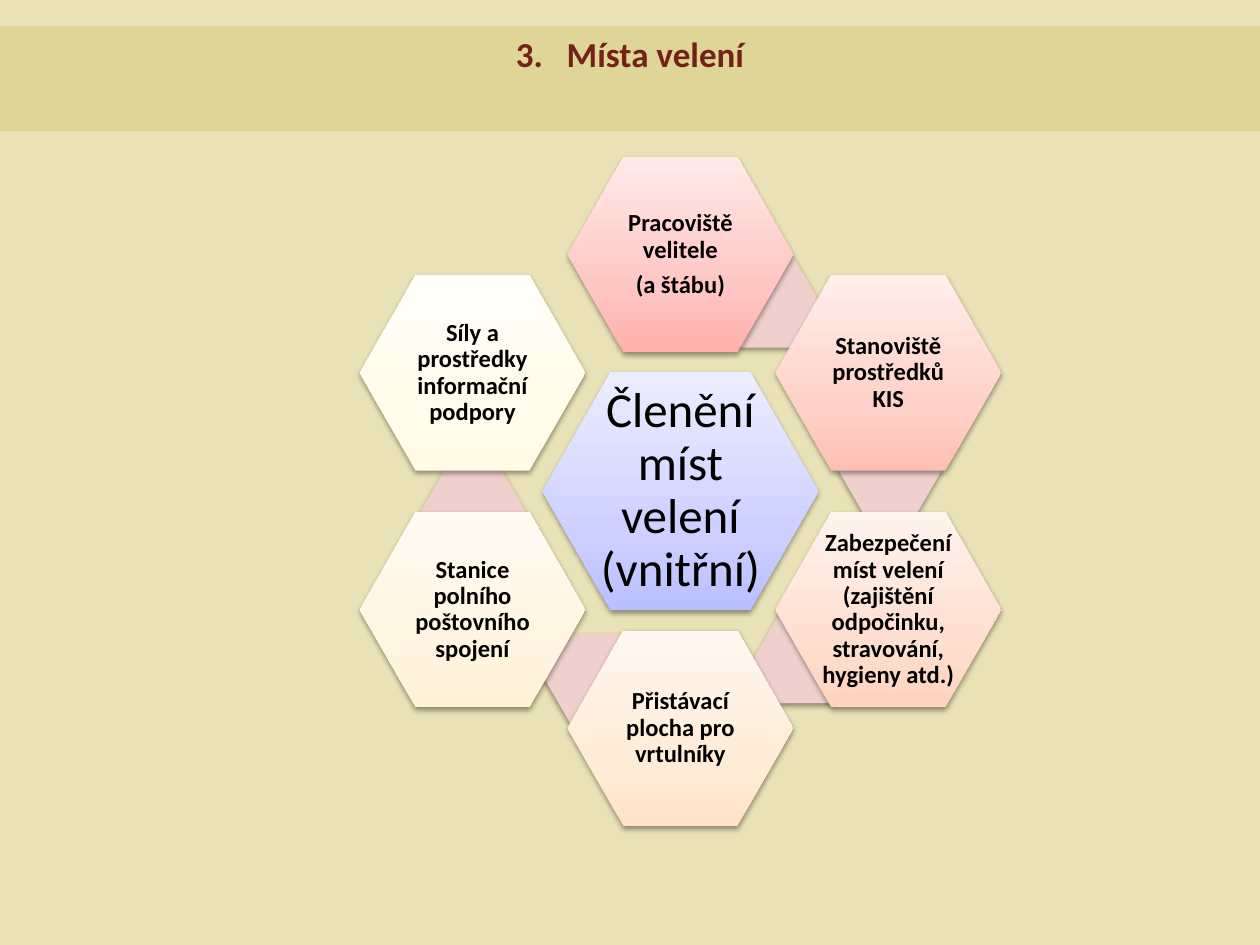
from copy import deepcopy

from lxml.etree import SubElement
from pptx import Presentation
from pptx.dml.color import RGBColor
from pptx.enum.shapes import MSO_SHAPE
from pptx.enum.text import MSO_ANCHOR, MSO_AUTO_SIZE, PP_ALIGN
from pptx.oxml.ns import qn
from pptx.util import Inches, Pt

BACKGROUND = RGBColor(0xE9, 0xE2, 0xB6)
BAND = RGBColor(0xDF, 0xD5, 0x96)
TITLE = RGBColor(0x72, 0x22, 0x19)
LINK = RGBColor(0xEF, 0xD0, 0xCF)
BLACK = RGBColor(0, 0, 0)
BLUES = [RGBColor(0xBA, 0xBF, 0xFF), RGBColor(0xCE, 0xD1, 0xFF), RGBColor(0xEC, 0xED, 0xFF)]
PINKS = [RGBColor(0xFF, 0xB0, 0xAC), RGBColor(0xFF, 0xC7, 0xC4), RGBColor(0xFF, 0xEA, 0xE9)]
CORALS = [RGBColor(0xFF, 0xC0, 0xB3), RGBColor(0xFF, 0xD2, 0xC9), RGBColor(0xFF, 0xEE, 0xEA)]
PEACHES = [RGBColor(0xFF, 0xD3, 0xBD), RGBColor(0xFF, 0xDF, 0xD0), RGBColor(0xFF, 0xF3, 0xED)]
APRICOTS = [RGBColor(0xFF, 0xE4, 0xC8), RGBColor(0xFF, 0xEC, 0xD8), RGBColor(0xFF, 0xF7, 0xF0)]
CREAMS = [RGBColor(0xFF, 0xF2, 0xD6), RGBColor(0xFF, 0xF5, 0xE1), RGBColor(0xFF, 0xFB, 0xF3)]
IVORIES = [RGBColor(0xFF, 0xFB, 0xE6), RGBColor(0xFF, 0xFC, 0xEC), RGBColor(0xFF, 0xFE, 0xF8)]

FONT = "Calibri"
CENTER_X, CENTER_Y = 5.4, 3.9
COLUMN_STEP, ROW_STEP = 1.65, 0.94
CENTER_SIZE = (2.19, 1.89)
OUTER_SIZE = (1.79, 1.55)
LINK_SIZE = (0.83, 0.71)

OUTER_HEXAGONS = [
    (0, -2, ["Pracoviště velitele", "(a štábu)"], PINKS),
    (1, -1, ["Stanoviště prostředků KIS"], CORALS),
    (1, 1, ["Zabezpečení míst velení (zajištění odpočinku, stravování, hygieny atd.)"], PEACHES),
    (0, 2, ["Přistávací plocha pro vrtulníky"], APRICOTS),
    (-1, 1, ["Stanice polního poštovního spojení"], CREAMS),
    (-1, -1, ["Síly a prostředky informační podpory"], IVORIES),
]
LINK_POSITIONS = [(5.68, 2.05), (6.65, 3.37), (5.98, 4.87), (4.32, 5.03), (3.34, 3.7)]


def add_run(paragraph, text, size, color, bold):
    run = paragraph.add_run()
    run.text = text
    run.font.name = FONT
    run.font.size = Pt(size)
    run.font.bold = bold
    run.font.color.rgb = color
    return run


def add_title(slide):
    title = slide.shapes.title
    title.left, title.top = Inches(0), Inches(0.21)
    title.width, title.height = Inches(10), Inches(0.44)
    title.fill.solid()
    title.fill.fore_color.rgb = BAND
    frame = title.text_frame
    frame.word_wrap = True
    frame.auto_size = MSO_AUTO_SIZE.SHAPE_TO_FIT_TEXT
    frame.vertical_anchor = MSO_ANCHOR.TOP
    paragraph = frame.paragraphs[0]
    paragraph.alignment = PP_ALIGN.CENTER
    add_run(paragraph, "3.", 20, TITLE, True)
    gap = add_run(paragraph, " ", 20, TITLE, True)
    gap._r.get_or_add_rPr().set("spc", "900")
    add_run(paragraph, "Místa velení", 20, TITLE, True)


def add_shadow(shape):
    shape.shadow.inherit = False
    effects = shape._element.spPr.find(qn("a:effectLst"))
    shadow = SubElement(effects, qn("a:outerShdw"), blurRad=str(Pt(3.1)),
                        dist=str(Pt(1.6)), dir="5400000", rotWithShape="0")
    color = SubElement(shadow, qn("a:srgbClr"), val="000000")
    SubElement(color, qn("a:alpha"), val="38000")


def add_hexagon(group, left, top, size, adjustment):
    width, height = size
    hexagon = group.shapes.add_shape(MSO_SHAPE.HEXAGON, Inches(left), Inches(top),
                                     Inches(width), Inches(height))
    hexagon.adjustments[0] = adjustment
    hexagon.line.fill.background()
    add_shadow(hexagon)
    return hexagon


def fill_gradient(shape, colors):
    shape.fill.gradient()
    shape.fill.gradient_angle = 90
    stop_list = shape._element.spPr.find(qn("a:gradFill")).find(qn("a:gsLst"))
    stop_list.append(deepcopy(stop_list[0]))
    for stop, position, color in zip(shape.fill.gradient_stops, (0, 0.35, 1), colors):
        stop.position = position
        stop.color.rgb = color


def add_link(group, left, top):
    link = add_hexagon(group, left, top, LINK_SIZE, 0.289)
    link.fill.solid()
    link.fill.fore_color.rgb = LINK


def add_text_hexagon(group, column, row, size, lines, colors, font_size, bold, inset):
    left = CENTER_X + column * COLUMN_STEP - size[0] / 2
    top = CENTER_Y + row * ROW_STEP - size[1] / 2
    hexagon = add_hexagon(group, left, top, size, 0.286)
    fill_gradient(hexagon, colors)
    frame = hexagon.text_frame
    frame.word_wrap = True
    frame.vertical_anchor = MSO_ANCHOR.MIDDLE
    frame.margin_left = frame.margin_right = Inches(inset)
    frame.margin_top = frame.margin_bottom = Inches(inset)
    for index, line in enumerate(lines):
        paragraph = frame.add_paragraph() if index else frame.paragraphs[0]
        paragraph.alignment = PP_ALIGN.CENTER
        paragraph.line_spacing = 0.9
        paragraph.space_after = Pt(0.35 * font_size)
        add_run(paragraph, line, font_size, BLACK, bold)


def add_diagram(slide):
    group = slide.shapes.add_group_shape()
    add_text_hexagon(group, 0, 0, CENTER_SIZE, ["Členění míst velení (vnitřní)"],
                     BLUES, 28, False, 0.04)
    for index, (column, row, lines, colors) in enumerate(OUTER_HEXAGONS):
        if index < len(LINK_POSITIONS):
            add_link(group, *LINK_POSITIONS[index])
        add_text_hexagon(group, column, row, OUTER_SIZE, lines, colors, 14, True, 0.02)


def main():
    presentation = Presentation()
    presentation.slide_width, presentation.slide_height = Inches(10), Inches(7.5)
    slide = presentation.slides.add_slide(presentation.slide_layouts[5])
    slide.background.fill.solid()
    slide.background.fill.fore_color.rgb = BACKGROUND
    add_title(slide)
    add_diagram(slide)
    presentation.save("out.pptx")


if __name__ == "__main__":
    main()
